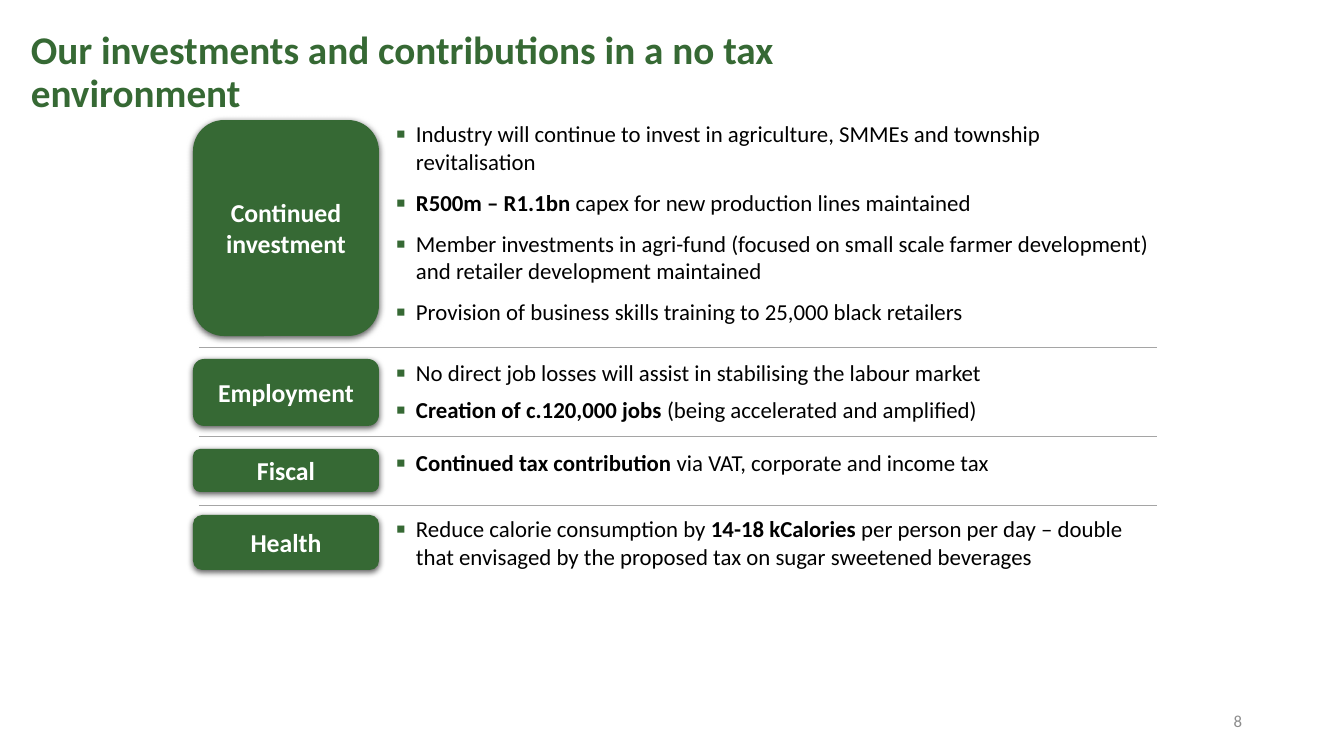
import pptx
import pptx.util
import pptx.dml.color
import pptx.enum.shapes
import pptx.enum.text
import pptx.oxml
import pptx.oxml.ns
from lxml import etree

TITLE = "Our investments and contributions in a no tax environment"
PAGE_NUMBER = "8"

# Each row: label, top, height, space after as a share of text size, bullets.
# A bullet is a list of (text, bold) pieces.
ROWS = [
    ("Continued investment", 120, 216, 0.6, [
        [("Industry will continue to invest in agriculture, SMMEs and township revitalisation", False)],
        [("R500m – R1.1bn ", True), ("capex for new production lines maintained", False)],
        [("Member investments in agri-fund (focused on small scale farmer development) "
          "and retailer development maintained", False)],
        [("Provision of business skills training to 25,000 black retailers", False)],
    ]),
    ("Employment", 359, 67, 0.4, [
        [("No direct job losses will assist in stabilising the labour market", False)],
        [("Creation of c.120,000 jobs ", True), ("(being accelerated and amplified)", False)],
    ]),
    ("Fiscal", 449, 43, 0.2, [
        [("Continued tax contribution", True), (" via VAT, corporate and income tax", False)],
    ]),
    ("Health", 515, 55, 0.2, [
        [("Reduce calorie consumption by ", False), ("14-18 kCalories ", True),
         ("per person per day – double that envisaged by the proposed tax on "
          "sugar sweetened beverages", False)],
    ]),
]
SEPARATOR_TOPS = [347, 436, 505]

# Layout in px
PX = 914400 / 100.8
LABEL_LEFT, LABEL_WIDTH = 193, 186
BULLETS_LEFT, BULLETS_WIDTH = 396, 754
SEPARATOR_LEFT, SEPARATOR_RIGHT = 199, 1157
BULLET_INDENT = 20

FONT = "Calibri"
TITLE_SIZE, LABEL_SIZE, BULLET_SIZE, NUMBER_SIZE = 28, 18.4, 16.3, 12
GREEN = pptx.dml.color.RGBColor(0x36, 0x69, 0x34)
WHITE = pptx.dml.color.RGBColor(0xFF, 0xFF, 0xFF)
BLACK = pptx.dml.color.RGBColor(0x00, 0x00, 0x00)
RULE_GREY = pptx.dml.color.RGBColor(0xA5, 0xA5, 0xA5)
NUMBER_GREY = pptx.dml.color.RGBColor(0x8C, 0x8C, 0x8C)

NS = pptx.oxml.ns.nsdecls("a")
BULLET_XML = [
    f'<a:buClr {NS}><a:srgbClr val="{GREEN}"/></a:buClr>',
    f'<a:buSzPct {NS} val="125000"/>',
    f'<a:buFont {NS} typeface="Arial"/>',
    f'<a:buChar {NS} char="▪"/>',
]
SHADOW_XML = (f'<a:outerShdw {NS} blurRad="57150" dist="19050" dir="5400000" algn="ctr" '
              'rotWithShape="0"><a:srgbClr val="000000"><a:alpha val="63000"/>'
              '</a:srgbClr></a:outerShdw>')


def px(*lengths):
    return [round(length * PX) for length in lengths]


def style(run, size, color, bold=False):
    run.font.name = FONT
    run.font.size = pptx.util.Pt(size)
    run.font.color.rgb = color
    run.font.bold = bold


def add_text(slide, box, text, size, color, bold=False):
    frame = slide.shapes.add_textbox(*px(*box)).text_frame
    frame.word_wrap = True
    frame.text = text
    style(frame.paragraphs[0].runs[0], size, color, bold)
    return frame


def add_label(slide, text, top, height):
    label = slide.shapes.add_shape(pptx.enum.shapes.MSO_SHAPE.ROUNDED_RECTANGLE,
                                   *px(LABEL_LEFT, top, LABEL_WIDTH, height))
    label.fill.solid()
    label.fill.fore_color.rgb = GREEN
    label.line.fill.background()
    label.shadow.inherit = False
    effects = label._element.spPr.find(pptx.oxml.ns.qn("a:effectLst"))
    effects.append(pptx.oxml.parse_xml(SHADOW_XML))
    frame = label.text_frame
    frame.word_wrap = True
    frame.vertical_anchor = pptx.enum.text.MSO_ANCHOR.MIDDLE
    frame.text = text
    frame.paragraphs[0].alignment = pptx.enum.text.PP_ALIGN.CENTER
    style(frame.paragraphs[0].runs[0], LABEL_SIZE, WHITE, True)


def add_bullets(slide, bullets, top, height, space_share):
    frame = slide.shapes.add_textbox(*px(BULLETS_LEFT, top, BULLETS_WIDTH, height)).text_frame
    frame.word_wrap = True
    frame.margin_left = frame.margin_top = frame.margin_right = frame.margin_bottom = 0
    for index, pieces in enumerate(bullets):
        paragraph = frame.add_paragraph() if index else frame.paragraphs[0]
        paragraph.space_after = pptx.util.Pt(BULLET_SIZE * space_share)
        properties = paragraph._p.get_or_add_pPr()
        indent, = px(BULLET_INDENT)
        properties.set("marL", str(indent))
        properties.set("indent", str(-indent))
        for xml in BULLET_XML:
            properties.append(pptx.oxml.parse_xml(xml))
        for text, bold in pieces:
            run = paragraph.add_run()
            run.text = text
            style(run, BULLET_SIZE, BLACK, bold)


def add_separator(slide, top):
    separator = slide.shapes.add_connector(
        pptx.enum.shapes.MSO_CONNECTOR.STRAIGHT,
        *px(SEPARATOR_LEFT, top, SEPARATOR_RIGHT, top))
    separator.line.color.rgb = RULE_GREY
    separator.line.width = pptx.util.Pt(0.5)
    etree.SubElement(separator._element.spPr, pptx.oxml.ns.qn("a:effectLst"))


def main():
    deck = pptx.Presentation()
    deck.slide_width, deck.slide_height = px(1344, 756)
    slide = deck.slides.add_slide(deck.slide_layouts[6])

    # Title
    title = add_text(slide, (21, 26, 970, 50), TITLE, TITLE_SIZE, GREEN, True)
    title.paragraphs[0].line_spacing = 0.9

    # Rows and the rules between them
    for label, top, height, space_share, bullets in ROWS:
        add_bullets(slide, bullets, top, height, space_share)
        add_label(slide, label, top, height)
    for top in SEPARATOR_TOPS:
        add_separator(slide, top)

    # Page number
    number = add_text(slide, (950, 701, 302, 40), PAGE_NUMBER, NUMBER_SIZE, NUMBER_GREY)
    number.vertical_anchor = pptx.enum.text.MSO_ANCHOR.MIDDLE
    number.paragraphs[0].alignment = pptx.enum.text.PP_ALIGN.RIGHT

    deck.save("out.pptx")


if __name__ == "__main__":
    main()
